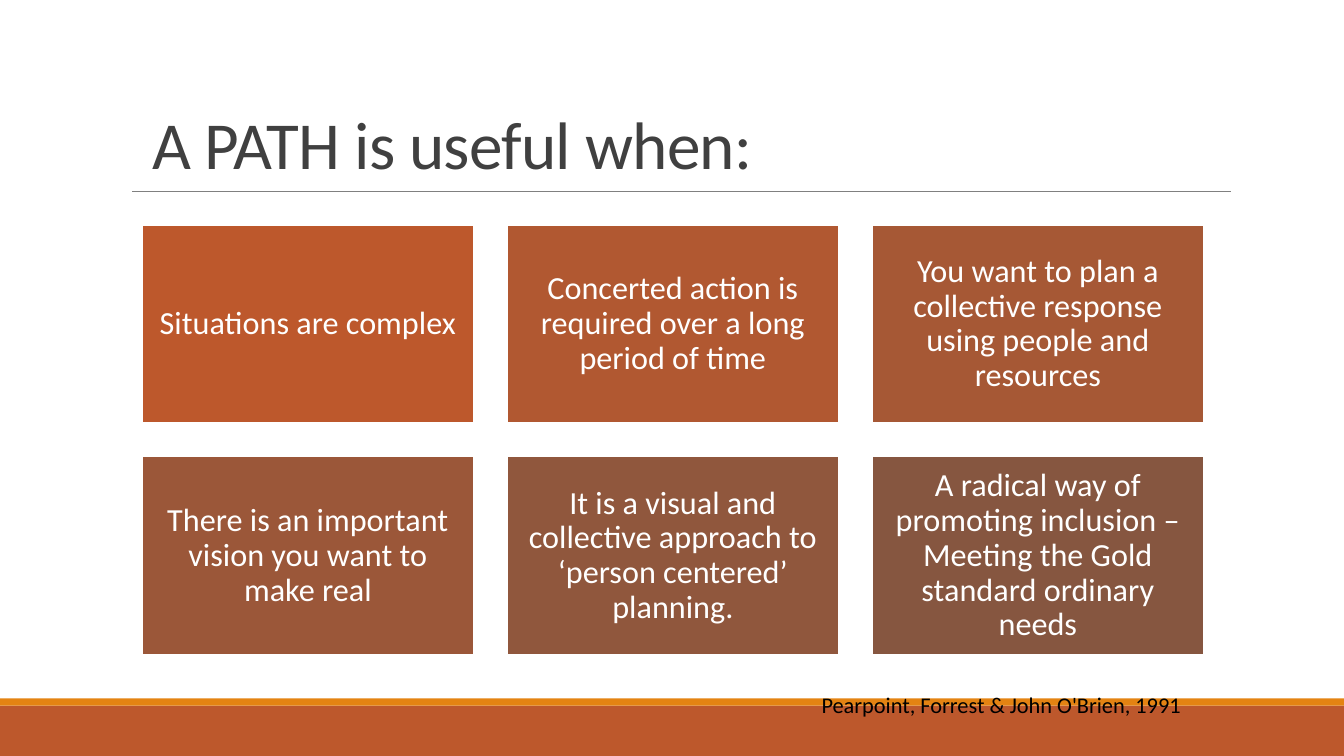
from pptx import Presentation
from pptx.dml.color import RGBColor as RGB
from pptx.enum.shapes import MSO_CONNECTOR as LINE, MSO_SHAPE as SHAPE
from pptx.enum.text import MSO_ANCHOR as ANCHOR, PP_ALIGN as ALIGN
from pptx.oxml.ns import qn
from pptx.util import Inches, Pt
from lxml import etree

WHITE = RGB(0xFF, 0xFF, 0xFF)
BLACK = RGB(0, 0, 0)
DARK = RGB(0x40, 0x40, 0x40)
GREY = RGB(0x80, 0x80, 0x80)
RUST = RGB(0xBD, 0x58, 0x2C)
AMBER = RGB(0xE4, 0x83, 0x12)

CARDS = [
    ("Situations are complex", RUST),
    ("Concerted action is required over a long period of time", RGB(0xB1, 0x58, 0x31)),
    ("You want to plan a collective response using people and resources", RGB(0xA6, 0x58, 0x35)),
    ("There is an important vision you want to make real", RGB(0x9B, 0x57, 0x39)),
    ("It is a visual and collective approach to ‘person centered’ planning.", RGB(0x90, 0x57, 0x3D)),
    ("A radical way of promoting inclusion – Meeting the Gold standard ordinary needs",
     RGB(0x86, 0x56, 0x40)),
]

# Card grid, in inches
COLS = 3
LEFT, TOP = 1.41, 2.23
WIDE, HIGH = 3.29, 1.97
GAP = 0.33

deck = Presentation()
deck.slide_width, deck.slide_height = Inches(13.33), Inches(7.5)
slide = deck.slides.add_slide(deck.slide_layouts[5])
shapes = slide.shapes


def add_box(x, y, w, h, color):
    box = shapes.add_shape(SHAPE.RECTANGLE, Inches(x), Inches(y), Inches(w), Inches(h))
    box.shadow.inherit = False
    box.fill.solid()
    box.fill.fore_color.rgb = color
    box.line.fill.background()
    return box


def set_text(frame, text, size, color, align=ALIGN.LEFT, space=1.0):
    frame.word_wrap = True
    frame.text = text
    para = frame.paragraphs[0]
    para.alignment, para.line_spacing = align, space
    font = para.runs[0].font
    font.name, font.size, font.color.rgb = "Calibri", Pt(size), color
    return para


# Footer bands
add_box(0, 7, 13.33, 0.5, RUST)
add_box(0, 6.93, 13.33, 0.07, AMBER)

# Rule under the title
rule = shapes.add_connector(LINE.STRAIGHT, Inches(1.31), Inches(1.9), Inches(12.21), Inches(1.9))
rule.line.color.rgb = GREY
rule.line.width = Pt(0.5)
etree.SubElement(rule.element.spPr, qn("a:effectLst"))

# Title
title = shapes.title
title.left, title.top = Inches(LEFT), Inches(0.67)
title.width, title.height = Inches(11.15), Inches(1.2)
title.text_frame.vertical_anchor = ANCHOR.BOTTOM
para = set_text(title.text_frame, "A PATH is useful when:", 48, DARK, space=0.85)
para.runs[0].font.element.set("spc", "-50") if hasattr(para.runs[0].font, "element") else \
    para.runs[0]._r.get_or_add_rPr().set("spc", "-50")

# Cards
for i, (text, color) in enumerate(CARDS):
    row, col = divmod(i, COLS)
    card = add_box(LEFT + col * (WIDE + GAP), TOP + row * (HIGH + GAP), WIDE, HIGH, color)
    card.line.color.rgb = WHITE
    card.line.width = Pt(1.25)
    frame = card.text_frame
    frame.vertical_anchor = ANCHOR.MIDDLE
    frame.margin_left = frame.margin_right = Inches(0.1)
    frame.margin_top = frame.margin_bottom = Inches(0.1)
    set_text(frame, text, 23, WHITE, ALIGN.CENTER, 0.9)

# Source credit
note = shapes.add_textbox(Inches(8.05), Inches(6.81), Inches(4.79), Inches(0.37))
set_text(note.text_frame, "Pearpoint, Forrest & John O'Brien, 1991", 16, BLACK)

deck.save("out.pptx")
